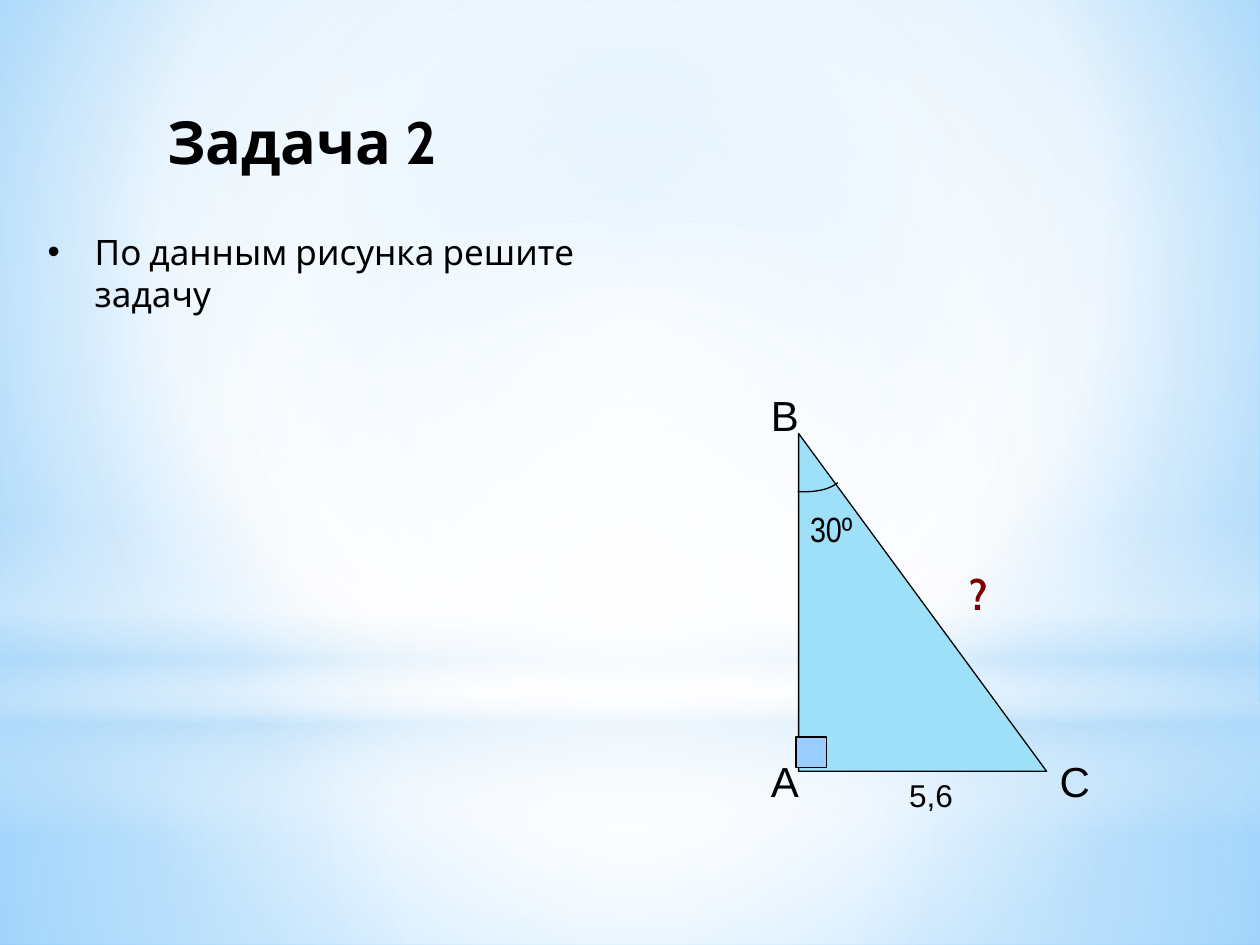
from dataclasses import dataclass

from lxml.etree import SubElement
from pptx import Presentation
from pptx.dml.color import RGBColor
from pptx.enum.shapes import MSO_SHAPE
from pptx.enum.text import MSO_ANCHOR, MSO_AUTO_SIZE, PP_ALIGN
from pptx.oxml.ns import qn
from pptx.util import Cm, Pt


@dataclass(frozen=True)
class Theme:
    ink: str = "000000"
    mark: str = "7E0000"
    face: str = "9EE0F8"
    square: str = "99CCFF"
    white: str = "FFFFFF"
    haze: str = "B4DCFA"
    sky: str = "9ED5FF"
    deep: str = "5BB9FF"
    head: str = "Cabin"
    plain: str = "Arial"
    slim: str = "Arial Narrow"
    title: int = 34
    point: int = 24
    body: int = 20
    side: int = 18
    line: float = 0.75


class Board:
    def __init__(self, slide, theme):
        self.slide = slide
        self.theme = theme

    def blend(self, parent, stops, focus=None):
        """Swap a solid fill for a gradient: circular round focus, else downward."""
        old = parent.find(qn("a:solidFill"))
        grad = parent.makeelement(qn("a:gradFill"), {"rotWithShape": "1"})
        items = SubElement(grad, qn("a:gsLst"))
        for pos, color, alpha in stops:
            stop = SubElement(items, qn("a:gs"), pos=str(pos * 1000))
            tint = SubElement(stop, qn("a:srgbClr"), val=color)
            if alpha < 100:
                SubElement(tint, qn("a:alpha"), val=str(alpha * 1000))
        if focus:
            ring = SubElement(grad, qn("a:path"), path="circle")
            edges = {k: str(v * 1000) for k, v in zip("ltrb", focus)}
            SubElement(ring, qn("a:fillToRect"), edges)
        else:
            SubElement(grad, qn("a:lin"), ang="5400000", scaled="0")
        parent.replace(old, grad)

    def back(self, stops, focus):
        self.slide.background.fill.solid()
        self.blend(self.slide.element.find(".//" + qn("p:bgPr")), stops, focus)

    def shape(self, kind, box, color):
        item = self.slide.shapes.add_shape(kind, *map(Cm, box))
        item.shadow.inherit = False
        item.fill.solid()
        item.fill.fore_color.rgb = RGBColor.from_string(color)
        self.stroke(item)
        return item

    def stroke(self, item):
        item.line.color.rgb = RGBColor.from_string(self.theme.ink)
        item.line.width = Pt(self.theme.line)

    def glow(self, kind, top, high, stops, focus=None):
        item = self.shape(kind, (0, top, 25.4, high), self.theme.white)
        item.line.fill.background()
        self.blend(item.element.spPr, stops, focus)

    def curve(self, ends, steps=16):
        """Draw an open cubic curve through its four control points."""
        def spot(t):
            u = 1 - t
            parts = (u ** 3, 3 * u * u * t, 3 * u * t * t, t ** 3)
            return tuple(Cm(sum(p * e[i] for p, e in zip(parts, ends))) for i in (0, 1))

        first, *rest = [spot(n / steps) for n in range(steps + 1)]
        path = self.slide.shapes.build_freeform(*first)
        path.add_line_segments(rest, close=False)
        item = path.convert_to_shape()
        item.shadow.inherit = False
        item.fill.background()
        self.stroke(item)

    def text(self, words, box, size, font, color=None, bold=False, gap=0):
        item = self.slide.shapes.add_textbox(*map(Cm, box))
        frame = item.text_frame
        frame.word_wrap = True
        frame.text = words
        para = frame.paragraphs[0]
        if gap:
            space = SubElement(para._p.get_or_add_pPr(), qn("a:spcBef"))
            SubElement(space, qn("a:spcPct"), val=str(gap * 1000))
        face = para.runs[0].font
        face.name, face.size, face.bold = font, Pt(size), bold
        face.color.rgb = RGBColor.from_string(color or self.theme.ink)
        return frame

    def label(self, words, box, size, font, **style):
        frame = self.text(words, box, size, font, gap=50, **style)
        frame.auto_size = MSO_AUTO_SIZE.SHAPE_TO_FIT_TEXT

    def title(self, words, box):
        frame = self.text(words, box, self.theme.title, self.theme.head, bold=True)
        frame.vertical_anchor = MSO_ANCHOR.MIDDLE
        frame.paragraphs[0].alignment = PP_ALIGN.CENTER

    def bullet(self, words, box):
        frame = self.text(words, box, self.theme.body, self.theme.head, gap=20)
        props = frame.paragraphs[0]._p.get_or_add_pPr()
        props.set("marL", str(Cm(0.95)))
        props.set("indent", str(-Cm(0.95)))
        SubElement(props, qn("a:buFont"), typeface=self.theme.plain)
        SubElement(props, qn("a:buChar"), char="•")


def main():
    deck = Presentation()
    deck.slide_width, deck.slide_height = Cm(25.4), Cm(19.05)
    look = Theme()
    board = Board(deck.slides.add_slide(deck.slide_layouts[6]), look)
    white, haze = look.white, look.haze
    mid = (50, 50, 50, 50)

    # Backdrop: sky, horizon and light
    board.back([(0, look.sky, 100), (60, white, 100), (100, look.deep, 100)],
               (20, 10, 20, 60))
    rect = MSO_SHAPE.RECTANGLE
    board.glow(rect, 14.17, 4.88, [(0, white, 91), (37, white, 76), (100, haze, 79)], mid)
    board.glow(rect, 0, 14.17, [(0, white, 89), (48, white, 62), (100, haze, 79)], mid)
    board.glow(rect, 10.46, 6.35, [(0, white, 0), (29, white, 30), (45, haze, 40),
                                   (55, white, 26), (65, haze, 60), (100, white, 0)])
    board.glow(MSO_SHAPE.OVAL, 4.44, 14.17, [(0, white, 100), (56, white, 0)], mid)

    # Triangle and its corners
    board.shape(MSO_SHAPE.RIGHT_TRIANGLE, (16.1, 8.74, 5, 6.81), look.face)
    for name, left, top, wide in (("A", 15.29, 15.11, 0.81),
                                  ("B", 15.29, 7.72, 0.99),
                                  ("C", 21.11, 15.11, 0.81)):
        board.label(name, (left, top, wide, 1.27), look.point, look.plain)

    # Angle marks
    board.shape(rect, (16.05, 14.86, 0.61, 0.61), look.square)
    board.curve([(16.89, 9.73), (16.71, 9.88), (16.41, 9.93), (16.08, 9.91)])

    # Given and wanted values
    board.label("30º", (16.08, 10.11, 1.6, 1.09), look.body, look.slim)
    board.label("5,6", (18.08, 15.52, 1.4, 1.02), look.side, look.plain)
    board.label("?", (19.3, 11.33, 0.61, 1.27), look.point, look.head,
                color=look.mark, bold=True)

    # Heading and task
    board.title("Задача 2", (0.89, 1.12, 10.39, 3.43))
    board.bullet("По данным рисунка решите задачу", (0.71, 4.52, 13.21, 1.88))

    deck.save("out.pptx")


if __name__ == "__main__":
    main()
